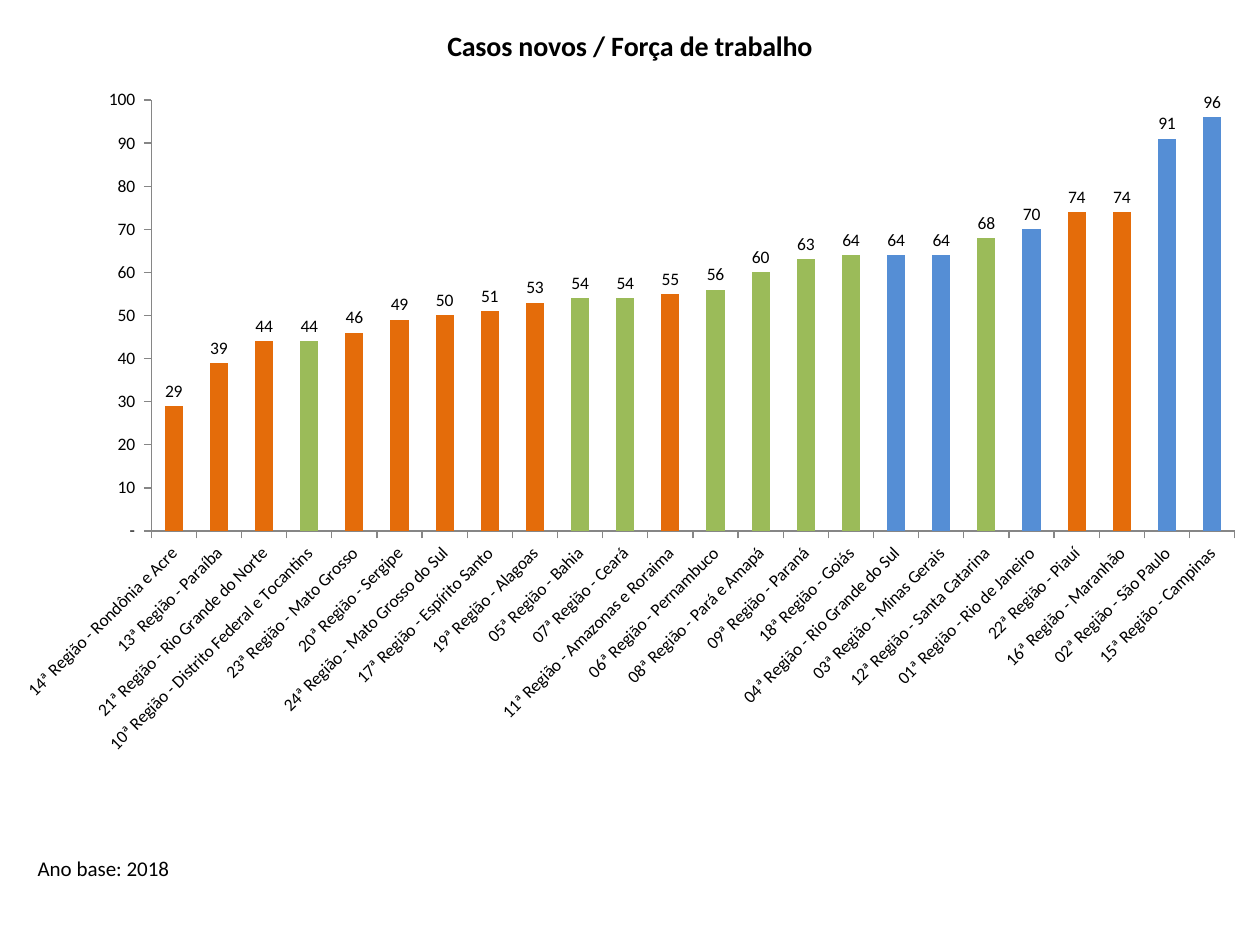
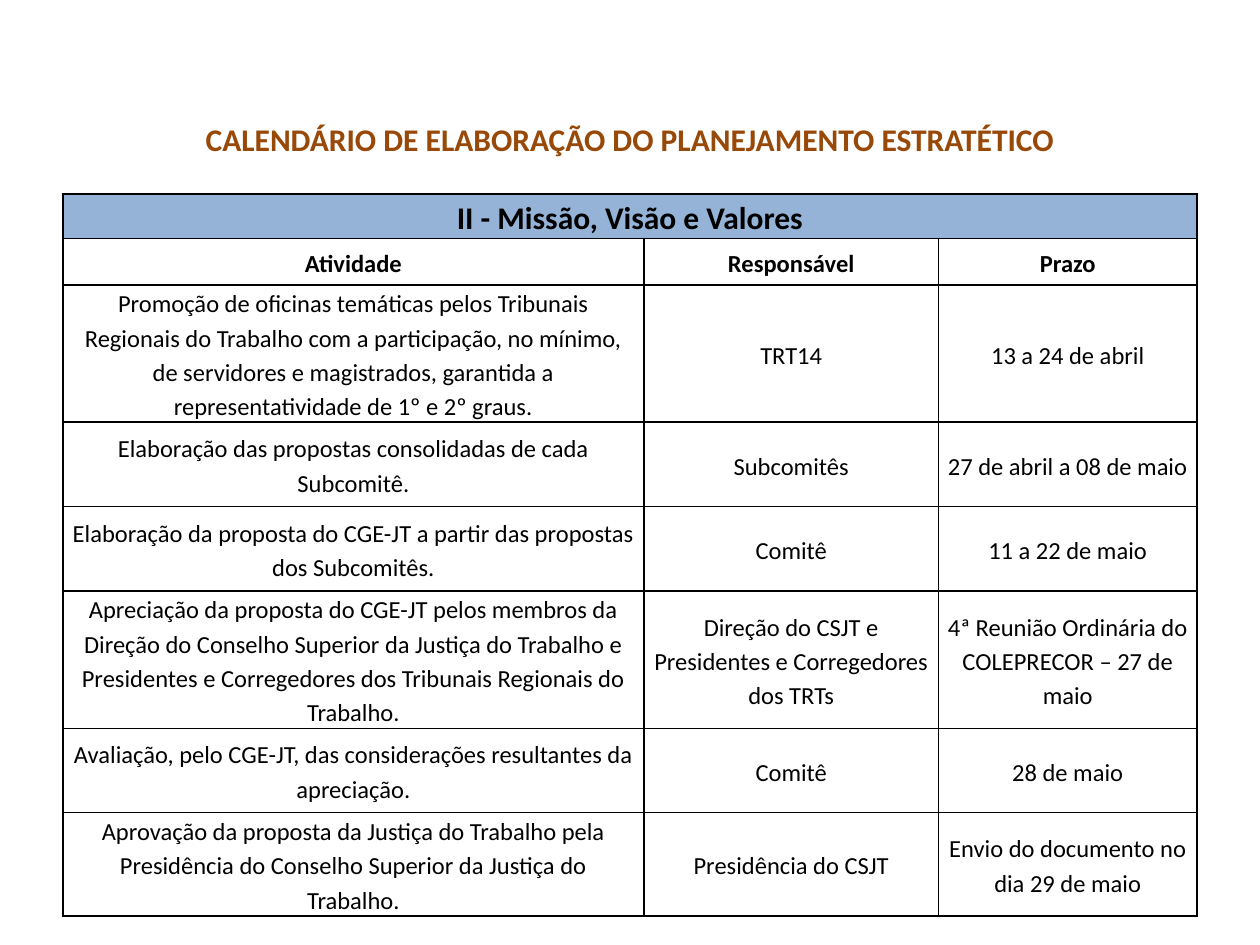
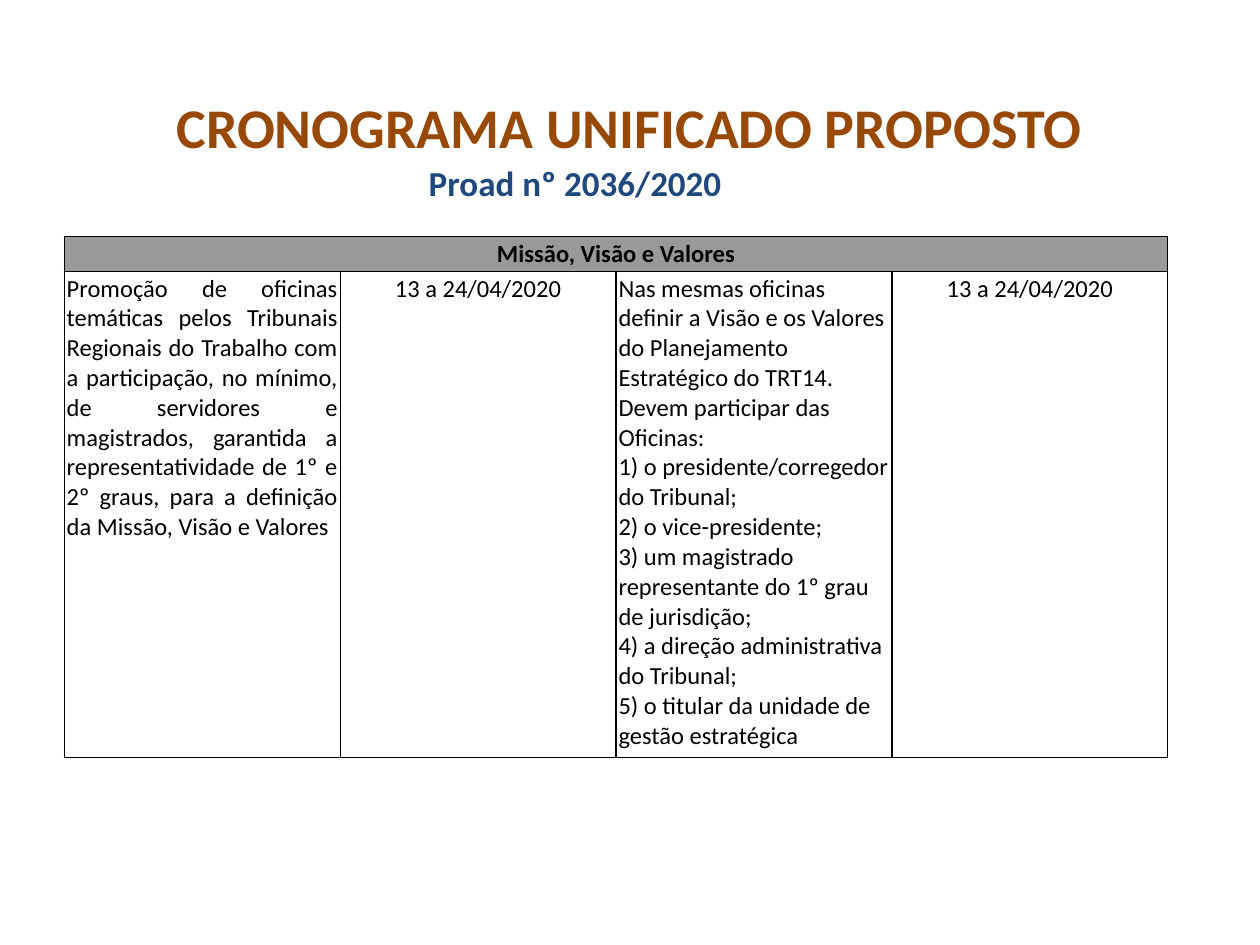
from dataclasses import dataclass

import pptx
import pptx.chart.data
import pptx.dml.color
import pptx.enum.chart
import pptx.enum.text
import pptx.oxml
import pptx.oxml.ns
import pptx.util

Inches = pptx.util.Inches
Pt = pptx.util.Pt
ALIGN = pptx.enum.text.PP_ALIGN
ANCHOR = pptx.enum.text.MSO_ANCHOR


@dataclass(frozen=True)
class Theme:
    font: str = "Calibri"
    text: str = "000000"
    heading: str = "984807"
    subheading: str = "1F497D"
    axis: str = "868686"
    calendar_band: str = "95B3D7"
    schedule_band: str = "999999"
    small_court: str = "E46C0A"
    medium_court: str = "9BBB59"
    large_court: str = "558ED5"
    chart_size: int = 10
    note_size: int = 12
    table_size: int = 14
    chart_title_size: int = 16
    section_size: int = 18
    subheading_size: int = 20
    heading_size: int = 32


THEME = Theme()
SMALL, MEDIUM, LARGE = THEME.small_court, THEME.medium_court, THEME.large_court

CASELOAD_TITLE = "Casos novos / Força de trabalho"
BASE_YEAR = "Ano base: 2018"
CASELOAD = [
    ("14ª Região - Rondônia e Acre", 29, SMALL),
    ("13ª Região - Paraíba", 39, SMALL),
    ("21ª Região - Rio Grande do Norte", 44, SMALL),
    ("10ª Região - Distrito Federal e Tocantins", 44, MEDIUM),
    ("23ª Região - Mato Grosso", 46, SMALL),
    ("20ª Região - Sergipe", 49, SMALL),
    ("24ª Região - Mato Grosso do Sul", 50, SMALL),
    ("17ª Região - Espírito Santo", 51, SMALL),
    ("19ª Região - Alagoas", 53, SMALL),
    ("05ª Região - Bahia", 54, MEDIUM),
    ("07ª Região - Ceará", 54, MEDIUM),
    ("11ª Região - Amazonas e Roraima", 55, SMALL),
    ("06ª Região - Pernambuco", 56, MEDIUM),
    ("08ª Região - Pará e Amapá", 60, MEDIUM),
    ("09ª Região - Paraná", 63, MEDIUM),
    ("18ª Região - Goiás", 64, MEDIUM),
    ("04ª Região - Rio Grande do Sul", 64, LARGE),
    ("03ª Região - Minas Gerais", 64, LARGE),
    ("12ª Região - Santa Catarina", 68, MEDIUM),
    ("01ª Região - Rio de Janeiro", 70, LARGE),
    ("22ª Região - Piauí", 74, SMALL),
    ("16ª Região - Maranhão", 74, SMALL),
    ("02ª Região - São Paulo", 91, LARGE),
    ("15ª Região - Campinas", 96, LARGE),
]

CALENDAR_TITLE = "CALENDÁRIO DE ELABORAÇÃO DO PLANEJAMENTO ESTRATÉTICO"
CALENDAR_BAND = "II - Missão, Visão e Valores"
CALENDAR = [
    ("Atividade", "Responsável", "Prazo"),
    ("Promoção de oficinas temáticas pelos Tribunais Regionais do Trabalho com a "
     "participação, no mínimo, de servidores e magistrados, garantida a "
     "representatividade de 1º e 2º graus.", "TRT14", "13 a 24 de abril"),
    ("Elaboração das propostas consolidadas de cada Subcomitê.",
     "Subcomitês", "27 de abril a 08 de maio"),
    ("Elaboração da proposta do CGE-JT a partir das propostas dos Subcomitês.",
     "Comitê", "11 a 22 de maio"),
    ("Apreciação da proposta do CGE-JT pelos membros da Direção do Conselho Superior "
     "da Justiça do Trabalho e Presidentes e Corregedores dos Tribunais Regionais do "
     "Trabalho.", "Direção do CSJT e Presidentes e Corregedores dos TRTs",
     "4ª Reunião Ordinária do COLEPRECOR – 27 de maio"),
    ("Avaliação, pelo CGE-JT, das considerações resultantes da apreciação.",
     "Comitê", "28 de maio"),
    ("Aprovação da proposta da Justiça do Trabalho pela Presidência do Conselho "
     "Superior da Justiça do Trabalho.", "Presidência do CSJT",
     "Envio do documento no dia 29 de maio"),
]
CALENDAR_COLUMNS = (4.61, 2.34, 2.05)
CALENDAR_ROWS = (0.35, 0.37, 1.09, 0.67, 0.67, 1.09, 0.67, 0.82)

SCHEDULE_TITLE = "CRONOGRAMA UNIFICADO PROPOSTO"
SCHEDULE_SUBTITLE = "Proad nº 2036/2020"
SCHEDULE_BAND = "Missão, Visão e Valores"
WORKSHOP_DATES = "13 a 24/04/2020"
SCHEDULE = [(
    "Promoção de oficinas temáticas pelos Tribunais Regionais do Trabalho com a "
    "participação, no mínimo, de servidores e magistrados, garantida a "
    "representatividade de 1º e 2º graus, para a definição da Missão, Visão e Valores",
    WORKSHOP_DATES,
    "\n".join([
        "Nas mesmas oficinas definir a Visão e os Valores do Planejamento "
        "Estratégico do TRT14.",
        "Devem participar das Oficinas:",
        "1) o presidente/corregedor do Tribunal;",
        "2) o vice-presidente;",
        "3) um magistrado representante do 1º grau de jurisdição;",
        "4) a direção administrativa do Tribunal;",
        "5) o titular da unidade de gestão estratégica",
    ]),
    WORKSHOP_DATES,
)]
SCHEDULE_COLUMNS = (2.19,) * 4
SCHEDULE_ROWS = (0.27, 3.86)
SCHEDULE_ALIGNS = (ALIGN.JUSTIFY, ALIGN.CENTER, ALIGN.LEFT, ALIGN.CENTER)


def rgb(color):
    return pptx.dml.color.RGBColor.from_string(color)


def style_font(font, size, color=THEME.text, bold=False):
    font.name = THEME.font
    font.size = Pt(size)
    font.bold = bold
    font.color.rgb = rgb(color)


def write(frame, text, size, color=THEME.text, bold=False, align=ALIGN.LEFT,
          line_spacing=None):
    frame.text = text
    for paragraph in frame.paragraphs:
        paragraph.alignment = align
        paragraph.line_spacing = line_spacing
        style_font(paragraph.font, size, color, bold)


def add_text(slide, box, text, size, **style):
    frame = slide.shapes.add_textbox(*map(Inches, box)).text_frame
    frame.word_wrap = True
    write(frame, text, size, **style)


def add_title(slide, box, text, size):
    title = slide.shapes.title
    title.left, title.top, title.width, title.height = map(Inches, box)
    frame = title.text_frame
    frame.word_wrap = False
    frame.auto_size = pptx.enum.text.MSO_AUTO_SIZE.NONE
    write(frame, text, size, THEME.heading, True, ALIGN.CENTER)


def border_cell(cell, width):
    properties = cell._tc.get_or_add_tcPr()
    for position, side in enumerate("LRTB"):
        properties.insert(position, pptx.oxml.parse_xml(
            f'<a:ln{side} {pptx.oxml.ns.nsdecls("a")} w="{Pt(width)}">'
            f'<a:solidFill><a:srgbClr val="{THEME.text}"/></a:solidFill></a:ln{side}>'))


def add_banded_table(slide, corner, columns, row_heights, band, band_color, band_size,
                     rows, aligns, margins, border, header_rows=0,
                     anchor=ANCHOR.TOP, line_spacing=None):
    """Add a bordered table whose first row is one merged, filled band."""
    size = sum(columns), sum(row_heights)
    table = slide.shapes.add_table(
        len(row_heights), len(columns), *map(Inches, corner + size)).table
    table.first_row = table.horz_banding = False
    for column, width in zip(table.columns, columns):
        column.width = Inches(width)
    for row, height in zip(table.rows, row_heights):
        row.height = Inches(height)

    table.cell(0, 0).merge(table.cell(0, len(columns) - 1))
    for cell in table.iter_cells():
        cell.margin_left = cell.margin_right = Inches(margins[0])
        cell.margin_top = cell.margin_bottom = Inches(margins[1])
        cell.vertical_anchor = anchor
        cell.fill.background()
        border_cell(cell, border)

    heading = table.cell(0, 0)
    heading.fill.solid()
    heading.fill.fore_color.rgb = rgb(band_color)
    write(heading.text_frame, band, band_size, bold=True, align=ALIGN.CENTER,
          line_spacing=line_spacing)
    for r, texts in enumerate(rows, 1):
        for c, (text, align) in enumerate(zip(texts, aligns)):
            write(table.cell(r, c).text_frame, text, THEME.table_size,
                  bold=r <= header_rows, align=align, line_spacing=line_spacing)


def place_plot(chart, x, y, w, h):
    """Fix the inner plot area, in fractions of the chart."""
    plot_area = chart._chartSpace.chart.plotArea
    for old in plot_area.findall(pptx.oxml.ns.qn("c:layout")):
        plot_area.remove(old)
    places = "".join(f'<c:{key} val="{value}"/>'
                     for key, value in zip("xywh", (x, y, w, h)))
    plot_area.insert(0, pptx.oxml.parse_xml(
        f'<c:layout {pptx.oxml.ns.nsdecls("c")}><c:manualLayout>'
        '<c:layoutTarget val="inner"/><c:xMode val="edge"/><c:yMode val="edge"/>'
        f'{places}</c:manualLayout></c:layout>'))


def add_caseload_chart(slide):
    regions, cases, colors = zip(*CASELOAD)
    data = pptx.chart.data.CategoryChartData()
    data.categories = regions
    data.add_series("Series 1", cases)
    chart = slide.shapes.add_chart(
        pptx.enum.chart.XL_CHART_TYPE.COLUMN_CLUSTERED,
        *map(Inches, (0, 0, 10, 6.11)), data).chart
    style_font(chart.font, THEME.chart_size)
    chart.has_legend = False
    chart.has_title = True
    title = chart.chart_title.text_frame
    title.text = CASELOAD_TITLE
    style_font(title.paragraphs[0].font, THEME.chart_title_size, bold=True)
    place_plot(chart, 0.12, 0.13, 0.86, 0.56)

    for axis in (chart.category_axis, chart.value_axis):
        axis.has_major_gridlines = False
        axis.major_tick_mark = pptx.enum.chart.XL_TICK_MARK.OUTSIDE
        axis.format.line.color.rgb = rgb(THEME.axis)
    chart.category_axis._element.get_or_add_txPr().bodyPr.set("rot", "-2700000")
    style_font(chart.category_axis.tick_labels.font, THEME.chart_size)
    scale = chart.value_axis
    scale.minimum_scale, scale.maximum_scale, scale.major_unit = 0, 100, 10
    scale.tick_labels.number_format = '_(* #,##0_);_(* \\(#,##0\\);_(* "-"_);_(@_)'
    scale.tick_labels.number_format_is_linked = False

    plot = chart.plots[0]
    plot.gap_width = 150
    plot.vary_by_categories = False
    bars = plot.series[0]
    bars.format.fill.solid()
    bars.format.fill.fore_color.rgb = rgb(MEDIUM)
    for index, color in enumerate(colors):
        if color != MEDIUM:
            fill = bars.points[index].format.fill
            fill.solid()
            fill.fore_color.rgb = rgb(color)
    labels = bars.data_labels
    labels.show_value = True
    labels.number_format = "#,##0"
    labels.number_format_is_linked = False
    labels.position = pptx.enum.chart.XL_LABEL_POSITION.OUTSIDE_END
    style_font(labels.font, THEME.chart_size)


def main():
    deck = pptx.Presentation()
    deck.slide_width, deck.slide_height = Inches(10), Inches(7.5)
    title_only, blank = deck.slide_layouts[5], deck.slide_layouts[6]

    caseload = deck.slides.add_slide(blank)
    add_caseload_chart(caseload)
    add_text(caseload, (0.2, 6.74, 2.05, 0.3), BASE_YEAR, THEME.note_size)

    calendar = deck.slides.add_slide(title_only)
    add_title(calendar, (1.5, 0.9, 7, 0.4), CALENDAR_TITLE, THEME.section_size)
    add_banded_table(
        calendar, (0.5, 1.54), CALENDAR_COLUMNS, CALENDAR_ROWS,
        CALENDAR_BAND, THEME.calendar_band, THEME.section_size,
        CALENDAR, (ALIGN.CENTER,) * 3, margins=(0.07, 0), border=1,
        header_rows=1, anchor=ANCHOR.MIDDLE, line_spacing=1.15)

    schedule = deck.slides.add_slide(title_only)
    add_title(schedule, (1.27, 0.68, 7.45, 0.64), SCHEDULE_TITLE, THEME.heading_size)
    add_text(schedule, (3.11, 1.23, 2.91, 0.44), SCHEDULE_SUBTITLE,
             THEME.subheading_size, color=THEME.subheading, bold=True,
             align=ALIGN.CENTER)
    add_banded_table(
        schedule, (0.51, 1.88), SCHEDULE_COLUMNS, SCHEDULE_ROWS,
        SCHEDULE_BAND, THEME.schedule_band, THEME.table_size,
        SCHEDULE, SCHEDULE_ALIGNS, margins=(0.02, 0.02), border=0.75)

    deck.save("out.pptx")


if __name__ == "__main__":
    main()
